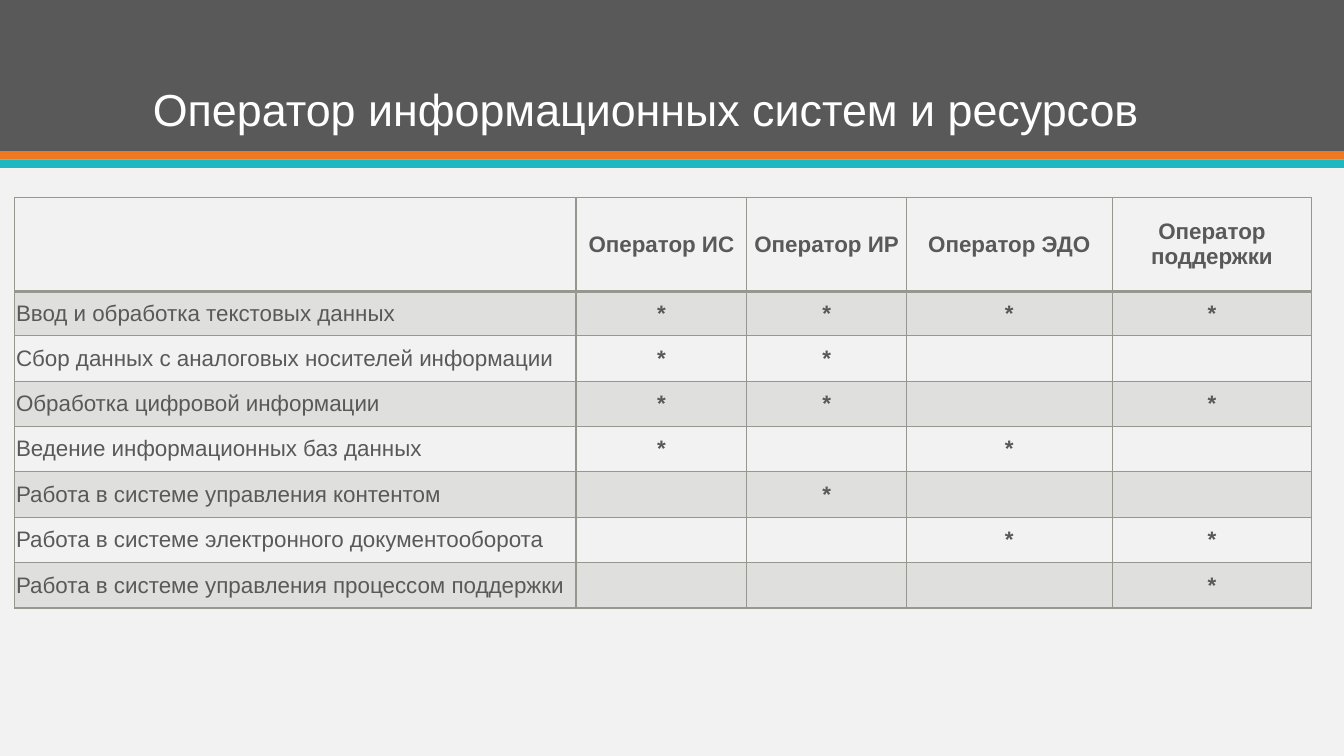
"""Build a slide with a table of operator roles and their duties."""
from pptx import Presentation
from pptx.dml.color import RGBColor
from pptx.enum import shapes, text
from pptx.oxml import parse_xml
from pptx.oxml.ns import nsdecls, qn
from pptx.util import Pt

TITLE = "Оператор информационных систем и ресурсов"
ROLES = ["Оператор ИС", "Оператор ИР", "Оператор ЭДО", "Оператор поддержки"]
DUTIES = [
    ("Ввод и обработка текстовых данных", (1, 2, 3, 4)),
    ("Сбор данных с аналоговых носителей информации", (1, 2)),
    ("Обработка цифровой информации", (1, 2, 4)),
    ("Ведение информационных баз данных", (1, 3)),
    ("Работа в системе управления контентом", (2,)),
    ("Работа в системе электронного документооборота", (3, 4)),
    ("Работа в системе управления процессом поддержки", (4,)),
]

PAPER = RGBColor(0xF2, 0xF2, 0xF2)
GREY = RGBColor(0x59, 0x59, 0x59)
ORANGE = RGBColor(0xEF, 0x79, 0x20)
TEAL = RGBColor(0x1E, 0xB8, 0xC1)
STONE = RGBColor(0x96, 0x98, 0x90)
WHITE = RGBColor(0xFF, 0xFF, 0xFF)

FONT = "Arial"
WIDTH, HEIGHT = 960, 540
BANDS = [(0, 108, GREY), (108, 6, ORANGE), (114, 6, TEAL)]
TITLE_BOX = dict(left=102, top=20, width=756, height=81)
TABLE_LEFT, TABLE_TOP = 10.5, 141
COLUMNS = [401, 122, 114, 147, 142.6]
ROWS = [67.4, 31.5] + [32.4] * (len(DUTIES) - 1)
CELL_FORMAT = dict(margin_left=Pt(1), margin_right=Pt(1), margin_top=Pt(1),
                   margin_bottom=Pt(1), vertical_anchor=text.MSO_ANCHOR.MIDDLE)


def style_run(r, size, color, bold=False):
    """Set the font of a run."""
    for name, value in dict(name=FONT, size=Pt(size), bold=bold).items():
        setattr(r.font, name, value)
    r.font.color.rgb = color


def add_bands(s, title):
    """Draw the header bands behind the title."""
    for top, height, color in BANDS:
        sp = s.shapes.add_shape(shapes.MSO_SHAPE.RECTANGLE, 0, Pt(top), Pt(WIDTH), Pt(height))
        sp.shadow.inherit = False
        sp.fill.solid()
        sp.fill.fore_color.rgb = color
        sp.line.fill.background()
        title.element.addprevious(sp.element)


def format_title(title):
    """Place the title and set its text."""
    for name, value in TITLE_BOX.items():
        setattr(title, name, Pt(value))
    tf = title.text_frame
    tf.auto_size = text.MSO_AUTO_SIZE.NONE
    tf.vertical_anchor = text.MSO_ANCHOR.BOTTOM
    p = tf.paragraphs[0]
    p.alignment = text.PP_ALIGN.LEFT
    p.line_spacing = 0.9
    r = p.add_run()
    r.text = TITLE
    style_run(r, 32, WHITE)


def add_borders(cell, widths):
    """Outline a cell with the given width for each side."""
    tc_pr = cell._tc.get_or_add_tcPr()
    for side, width in widths.items():
        tc_pr.append(parse_xml(
            f'<a:ln{side} {nsdecls("a")} w="{Pt(width)}"><a:solidFill>'
            f'<a:srgbClr val="{STONE}"/></a:solidFill></a:ln{side}>'))


def fill_cell(cell, shaded):
    """Tint a shaded cell and leave the others clear."""
    if not shaded:
        cell.fill.background()
        return
    cell.fill.solid()
    cell.fill.fore_color.rgb = STONE
    color = cell._tc.tcPr.find(qn("a:solidFill")).find(qn("a:srgbClr"))
    color.append(parse_xml(f'<a:alpha {nsdecls("a")} val="20000"/>'))


def add_duties(s):
    """Add the table of duties by role."""
    grid = [[""] + ROLES]
    for duty, marks in DUTIES:
        grid.append([duty] + ["*" if i in marks else "" for i in range(1, len(COLUMNS))])
    table = s.shapes.add_table(len(ROWS), len(COLUMNS), Pt(TABLE_LEFT), Pt(TABLE_TOP),
                               Pt(sum(COLUMNS)), Pt(sum(ROWS))).table
    table.first_row = table.horz_banding = False
    for column, width in zip(table.columns, COLUMNS):
        column.width = Pt(width)
    for row, height in zip(table.rows, ROWS):
        row.height = Pt(height)
    for i, line in enumerate(grid):
        for j, words in enumerate(line):
            cell = table.cell(i, j)
            for name, value in CELL_FORMAT.items():
                setattr(cell, name, value)
            add_borders(cell, dict(L=1, R=1, T=2 if i == 1 else 1, B=2 if i == 0 else 1))
            fill_cell(cell, i % 2 == 1)
            if words:
                p = cell.text_frame.paragraphs[0]
                p.alignment = text.PP_ALIGN.CENTER if j else text.PP_ALIGN.LEFT
                r = p.add_run()
                r.text = words
                style_run(r, 16, GREY, bold=j > 0)


def main():
    """Create the presentation and save it."""
    prs = Presentation()
    prs.slide_width, prs.slide_height = Pt(WIDTH), Pt(HEIGHT)
    s = prs.slides.add_slide(prs.slide_layouts[5])
    s.background.fill.solid()
    s.background.fill.fore_color.rgb = PAPER
    title = s.shapes.title
    format_title(title)
    add_bands(s, title)
    add_duties(s)
    prs.save("out.pptx")


if __name__ == "__main__":
    main()
